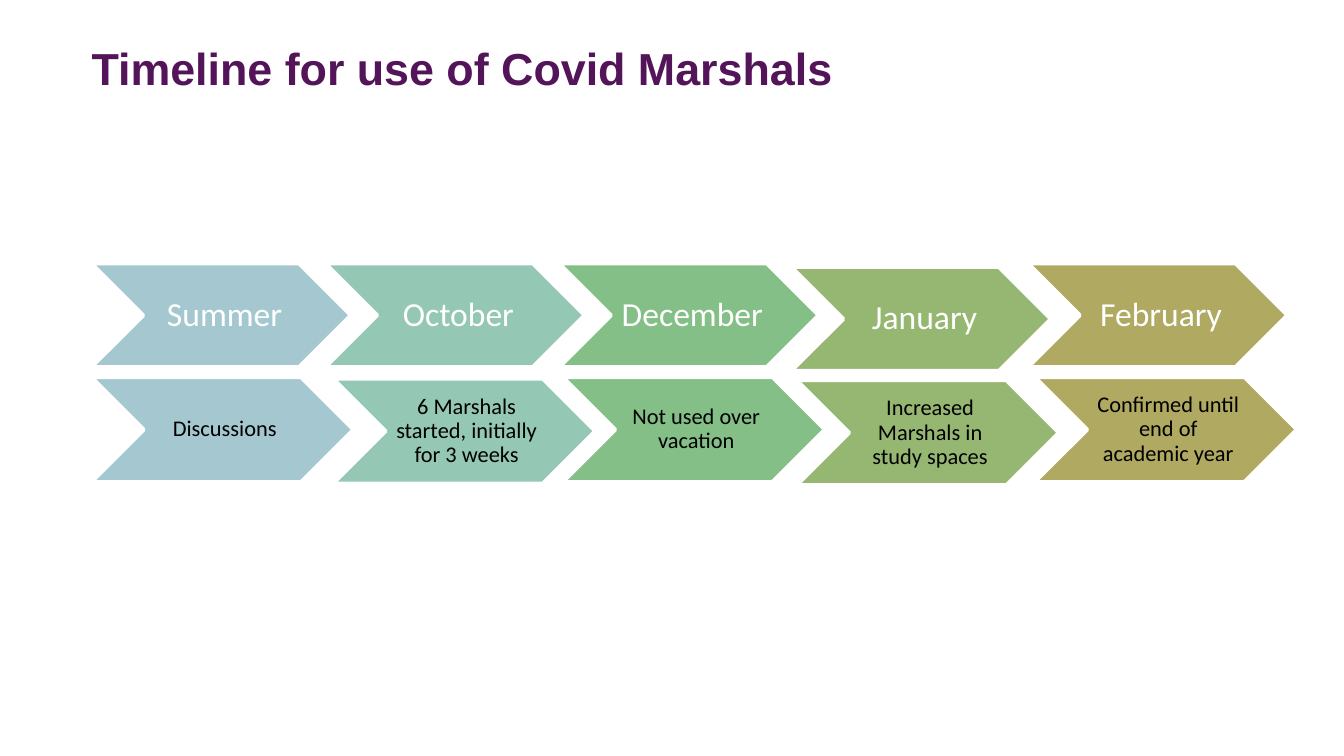
from pptx import Presentation
from pptx.dml.color import RGBColor
from pptx.enum.shapes import MSO_SHAPE as Shape
from pptx.enum.text import MSO_ANCHOR as Anchor, PP_ALIGN as Align
from pptx.util import Cm, Pt

TITLE = "Timeline for use of Covid Marshals"
COLOURS = ["A5C8D0", "94C8B4", "83BF86", "95B772", "AFA961"]

# Each step: text, left and top in cm
ROWS = [
    {
        "width": 4.9, "height": 1.96, "size": 18, "colour": "FFFFFF",
        "insets": (0.2, 0.07),
        "steps": [
            ("Summer", 1.73, 4.98),
            ("October", 6.15, 4.98),
            ("December", 10.57, 4.98),
            ("January", 14.96, 5.05),
            ("February", 19.43, 4.98),
        ],
    },
    {
        "width": 4.95, "height": 1.98, "size": 12, "colour": "000000",
        "insets": (0.13, 0.04),
        "steps": [
            ("Discussions", 1.73, 7.13),
            ("6 Marshals started, initially for 3 weeks", 6.3, 7.16),
            ("Not used over vacation", 10.64, 7.13),
            ("Increased Marshals in study spaces", 15.06, 7.19),
            ("Confirmed until end of academic year", 19.56, 7.13),
        ],
    },
]


def rgb(colour):
    return RGBColor.from_string(colour)


def set_insets(frame, left, others):
    frame.margin_left = Cm(left)
    frame.margin_top = frame.margin_right = frame.margin_bottom = Cm(others)


def add_run(paragraph, text, font_name, size, colour, bold=False):
    run = paragraph.add_run()
    run.text = text
    run.font.name = font_name
    run.font.size = Pt(size)
    run.font.bold = bold
    run.font.color.rgb = rgb(colour)


def add_title(slide):
    title = slide.shapes.title
    title.left, title.top = Cm(1.73), Cm(0.76)
    title.width, title.height = Cm(21.95), Cm(2.39)
    frame = title.text_frame
    frame.vertical_anchor = Anchor.TOP
    set_insets(frame, 0, 0)
    paragraph = frame.paragraphs[0]
    paragraph.alignment = Align.LEFT
    add_run(paragraph, TITLE, "Arial", 24, "54145A", bold=True)


def add_chevron(group, left, top, width, height, colour):
    chevron = group.shapes.add_shape(
        Shape.CHEVRON, Cm(left), Cm(top), Cm(width), Cm(height))
    chevron.shadow.inherit = False
    chevron.fill.solid()
    chevron.fill.fore_color.rgb = rgb(colour)
    chevron.line.color.rgb = rgb("FFFFFF")
    chevron.line.width = Pt(2)


def add_label(group, left, top, text, row):
    """Place the text between the notch and the point of its chevron."""
    width, height = row["width"], row["height"]
    label = group.shapes.add_textbox(
        Cm(left + height / 2), Cm(top), Cm(width - height), Cm(height))
    frame = label.text_frame
    frame.word_wrap = True
    frame.vertical_anchor = Anchor.MIDDLE
    set_insets(frame, *row["insets"])
    paragraph = frame.paragraphs[0]
    paragraph.alignment = Align.CENTER
    paragraph.line_spacing = 0.9
    add_run(paragraph, text, "Calibri", row["size"], row["colour"])


def main():
    presentation = Presentation()
    presentation.slide_width, presentation.slide_height = Cm(25.4), Cm(14.29)
    slide = presentation.slides.add_slide(presentation.slide_layouts[5])
    add_title(slide)
    for row in ROWS:
        group = slide.shapes.add_group_shape()
        for (text, left, top), colour in zip(row["steps"], COLOURS):
            add_chevron(group, left, top, row["width"], row["height"], colour)
            add_label(group, left, top, text, row)
    presentation.save("out.pptx")


if __name__ == "__main__":
    main()
